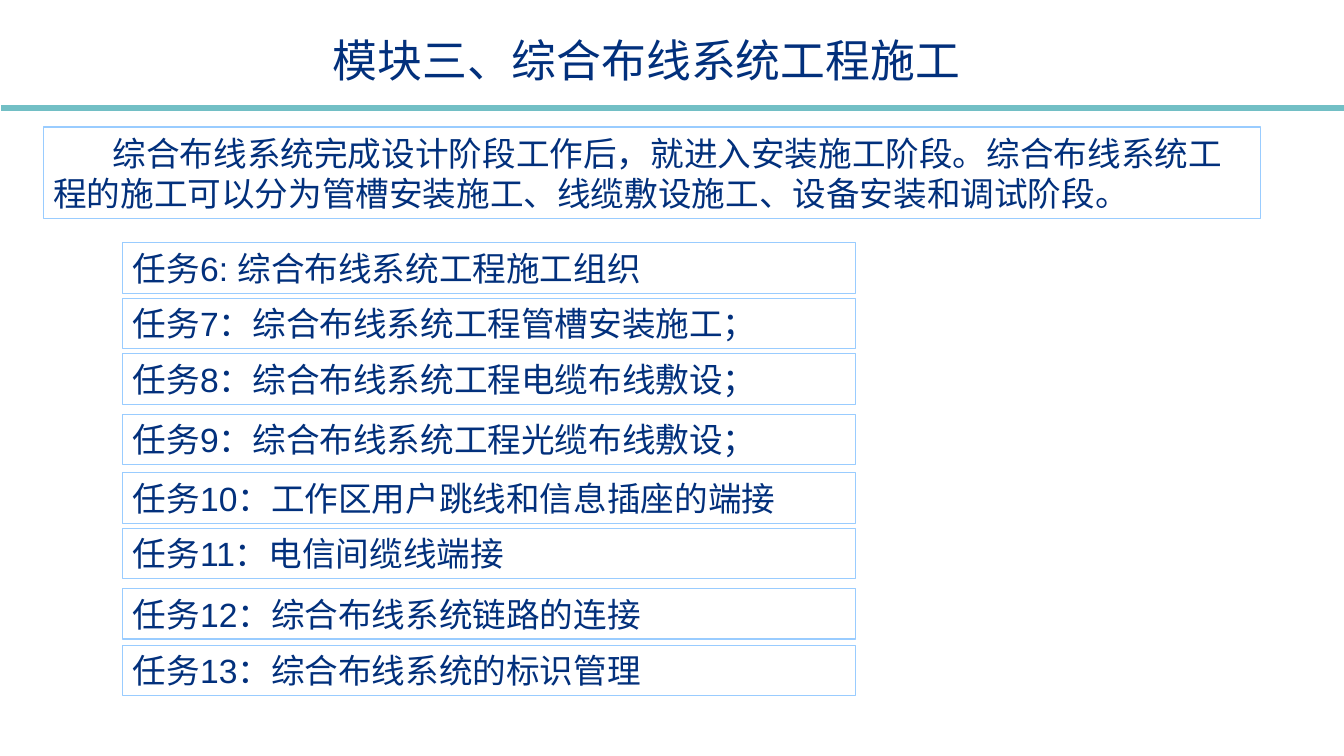
from dataclasses import dataclass

from lxml import etree
from pptx import Presentation
from pptx.dml.color import RGBColor
from pptx.enum.shapes import MSO_CONNECTOR, MSO_SHAPE
from pptx.enum.text import MSO_ANCHOR, MSO_AUTO_SIZE, PP_ALIGN
from pptx.oxml.ns import qn
from pptx.util import Inches, Pt

STRAIGHT = MSO_CONNECTOR.STRAIGHT
RECTANGLE = MSO_SHAPE.RECTANGLE
LEFT = PP_ALIGN.LEFT
MIDDLE = MSO_ANCHOR.MIDDLE
GROW = MSO_AUTO_SIZE.SHAPE_TO_FIT_TEXT

TITLE = "模块三、综合布线系统工程施工"
INTRO = (
    "综合布线系统完成设计阶段工作后，就进入安装施工阶段。"
    "综合布线系统工程的施工可以分为管槽安装施工、线缆敷设施工、设备安装和调试阶段。"
)
TASKS = [
    (2.41, "任务6: 综合布线系统工程施工组织"),
    (2.96, "任务7：综合布线系统工程管槽安装施工；"),
    (3.51, "任务8：综合布线系统工程电缆布线敷设；"),
    (4.11, "任务9：综合布线系统工程光缆布线敷设；"),
    (4.69, "任务10：工作区用户跳线和信息插座的端接"),
    (5.24, "任务11：电信间缆线端接"),
    (5.84, "任务12：综合布线系统链路的连接"),
    (6.4, "任务13：综合布线系统的标识管理"),
]

SLIDE_WIDTH, SLIDE_HEIGHT = 13.33, 7.5
TITLE_BOX = (3.2, 0.28, 8.11, 0.63)
INTRO_BOX = (0.43, 1.26, 12.07, 0.91)
INTRO_INDENT = 0.59
TASK_LEFT, TASK_WIDTH, TASK_HEIGHT = 1.22, 7.27, 0.5
RULE_LEFT, RULE_TOP = 0.01, 1.07


@dataclass(frozen=True)
class Theme:
    font: str = "Arial"
    text: RGBColor = RGBColor.from_string("02307C")
    fill: RGBColor = RGBColor.from_string("FFFFFF")
    border: RGBColor = RGBColor.from_string("99CCFF")
    rule: RGBColor = RGBColor.from_string("72BFC5")
    title_size: int = 32
    body_size: int = 24
    border_width: float = 0.75
    rule_width: float = 4.5


THEME = Theme()


def write_text(shape, text, size):
    frame = shape.text_frame
    frame.word_wrap = True
    paragraph = frame.paragraphs[0]
    paragraph.alignment = LEFT
    run = paragraph.add_run()
    run.text = text
    run.font.name = THEME.font
    run.font.size = Pt(size)
    run.font.color.rgb = THEME.text
    return paragraph


def add_rule(slide):
    top = Inches(RULE_TOP)
    rule = slide.shapes.add_connector(
        STRAIGHT, Inches(RULE_LEFT), top, Inches(SLIDE_WIDTH), top
    )
    rule.line.color.rgb = THEME.rule
    rule.line.width = Pt(THEME.rule_width)
    etree.SubElement(rule.element.find(qn("p:spPr")), qn("a:effectLst"))


def add_title(slide):
    title = slide.shapes.add_textbox(*map(Inches, TITLE_BOX))
    write_text(title, TITLE, THEME.title_size)
    title.text_frame.vertical_anchor = MIDDLE


def add_panel(slide, box, text):
    panel = slide.shapes.add_shape(RECTANGLE, *map(Inches, box))
    panel.shadow.inherit = False
    panel.fill.solid()
    panel.fill.fore_color.rgb = THEME.fill
    panel.line.color.rgb = THEME.border
    panel.line.width = Pt(THEME.border_width)
    paragraph = write_text(panel, text, THEME.body_size)
    panel.text_frame.vertical_anchor = MIDDLE
    panel.text_frame.auto_size = GROW
    return paragraph


def main():
    presentation = Presentation()
    presentation.slide_width = Inches(SLIDE_WIDTH)
    presentation.slide_height = Inches(SLIDE_HEIGHT)
    slide = presentation.slides.add_slide(presentation.slide_layouts[6])

    add_rule(slide)
    add_title(slide)
    intro = add_panel(slide, INTRO_BOX, INTRO)
    intro_properties = intro._p.get_or_add_pPr()
    intro_properties.set("marL", "0")
    intro_properties.set("indent", str(Inches(INTRO_INDENT)))
    for top, task in TASKS:
        add_panel(slide, (TASK_LEFT, top, TASK_WIDTH, TASK_HEIGHT), task)

    presentation.save("out.pptx")


if __name__ == "__main__":
    main()
